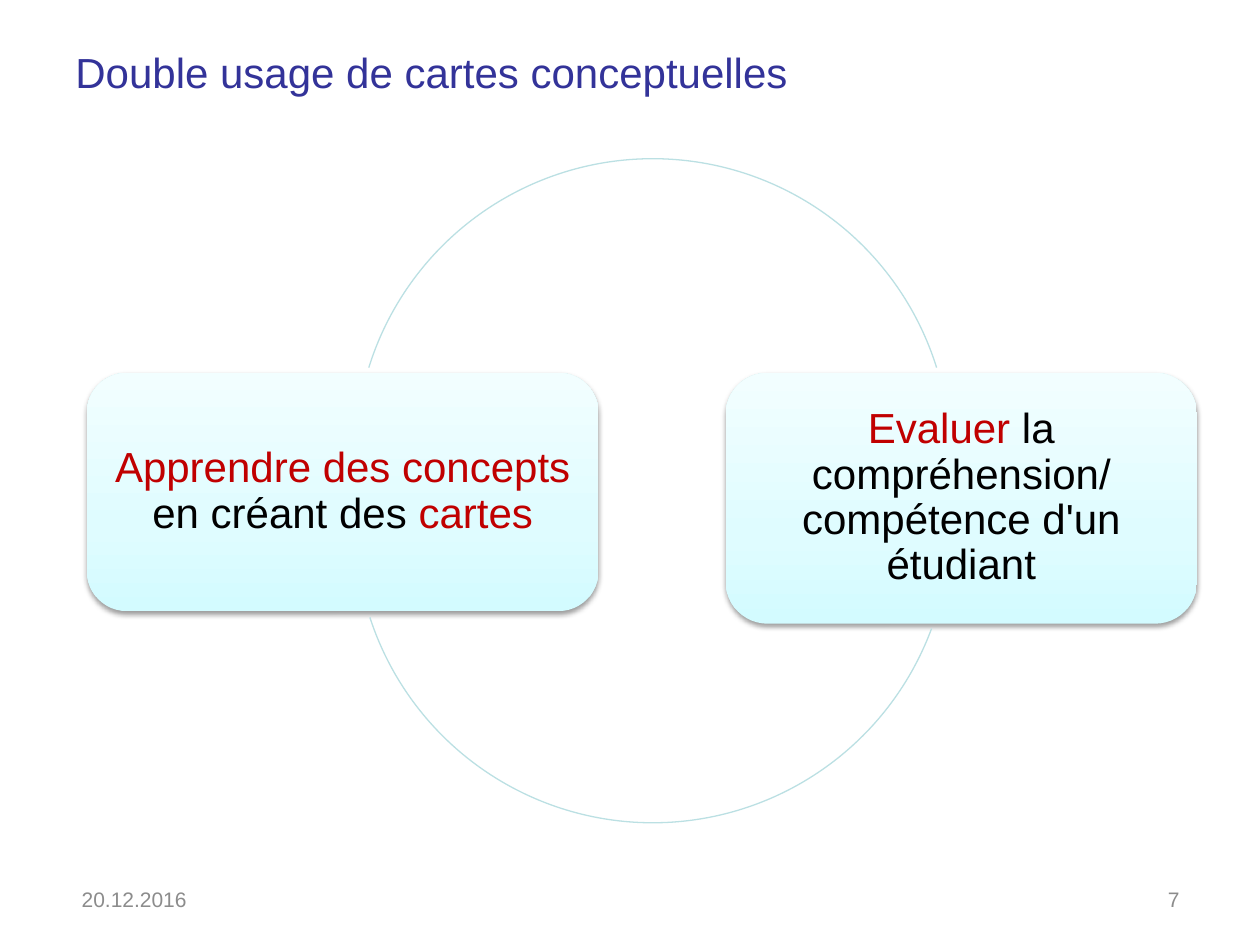
from copy import deepcopy
from dataclasses import dataclass

from lxml import etree
from pptx import Presentation
from pptx.dml.color import RGBColor
from pptx.enum.shapes import MSO_SHAPE
from pptx.enum.text import MSO_ANCHOR, PP_ALIGN
from pptx.oxml.ns import qn
from pptx.util import Inches, Pt

ARC, ROUNDED = MSO_SHAPE.ARC, MSO_SHAPE.ROUNDED_RECTANGLE
LEFT, CENTER, RIGHT = PP_ALIGN.LEFT, PP_ALIGN.CENTER, PP_ALIGN.RIGHT
MIDDLE = MSO_ANCHOR.MIDDLE
WIDTH, HEIGHT = 10, 7.5
ARC_UNITS_PER_DEGREE = 0.6


@dataclass(frozen=True)
class Theme:
    font: str = "Arial"
    title: str = "333399"
    accent: str = "C00000"
    body: str = "000000"
    footer: str = "8C8C8C"
    cycle: str = "BBE0E3"
    card: tuple = ((0, "D3FBFF"), (0.35, "DFFCFF"), (1, "F2FEFF"))
    large: int = 24
    small: int = 12
    hairline: float = 0.75


THEME = Theme()


def rgb(value):
    return RGBColor.from_string(value)


def inches(*lengths):
    return [Inches(length) for length in lengths]


def set_font(font, size, color=None):
    font.name = THEME.font
    font.size = Pt(size)
    if color:
        font.color.rgb = rgb(color)


def add_text(s, box, text, size, color, align=LEFT):
    tf = s.shapes.add_textbox(*inches(*box)).text_frame
    tf.word_wrap = True
    tf.vertical_anchor = MIDDLE
    p = tf.paragraphs[0]
    p.text = text
    p.alignment = align
    set_font(p.font, size, color)


def add_arc(s, box, start, end):
    sp = s.shapes.add_shape(ARC, *inches(*box))
    sp.shadow.inherit = False
    sp.adjustments[0] = start * ARC_UNITS_PER_DEGREE
    sp.adjustments[1] = end * ARC_UNITS_PER_DEGREE
    sp.fill.background()
    sp.line.color.rgb = rgb(THEME.cycle)
    sp.line.width = Pt(THEME.hairline)


def fill_gradient(sp):
    sp.fill.gradient()
    sp.fill.gradient_angle = 90
    stops = sp._element.spPr.find(qn("a:gradFill")).find(qn("a:gsLst"))
    stops.append(deepcopy(stops[0]))
    for stop, (position, color) in zip(sp.fill.gradient_stops, THEME.card):
        stop.position = position
        stop.color.rgb = rgb(color)


def drop_shadow(sp):
    sp.shadow.inherit = False
    effects = sp._element.spPr.find(qn("a:effectLst"))
    shadow = etree.SubElement(
        effects, qn("a:outerShdw"), blurRad=str(Pt(3.1)), dist=str(Pt(1.6)),
        dir="5400000", rotWithShape="0")
    color = etree.SubElement(shadow, qn("a:srgbClr"), val="000000")
    etree.SubElement(color, qn("a:alpha"), val="38000")


def add_card(s, box, runs):
    sp = s.shapes.add_shape(ROUNDED, *inches(*box))
    fill_gradient(sp)
    sp.line.fill.background()
    drop_shadow(sp)
    tf = sp.text_frame
    tf.word_wrap = True
    tf.vertical_anchor = MIDDLE
    tf.margin_left = tf.margin_right = Inches(0.1)
    tf.margin_top = tf.margin_bottom = Inches(0.1)
    p = tf.paragraphs[0]
    p.alignment = CENTER
    p.line_spacing = 0.9
    set_font(p.font, THEME.large)
    for text, color in runs:
        for i, line in enumerate(text.split("\n")):
            if i:
                p.add_line_break()
            r = p.add_run()
            r.text = line
            set_font(r.font, THEME.large, color)


def main():
    prs = Presentation()
    prs.slide_width, prs.slide_height = inches(WIDTH, HEIGHT)
    s = prs.slides.add_slide(prs.slide_layouts[6])

    margin = 0.05 * WIDTH
    add_text(s, (margin, 0.04 * HEIGHT, WIDTH - 2 * margin, 0.54),
             "Double usage de cartes conceptuelles", THEME.large, THEME.title)

    card_top = 2.96
    add_card(s, (0.69, card_top, 4.06, 1.89),
             [("Apprendre des concepts ", THEME.accent),
              ("en créant des ", THEME.body),
              ("cartes", THEME.accent)])
    add_card(s, (5.76, card_top, 3.74, 1.99),
             [("Evaluer", THEME.accent),
              (" la compréhension/\ncompétence d'un étudiant", THEME.body)])

    cycle_left, diameter = 2.82, 4.72
    for top, start, end in ((1.26, 197.3, 342.7), (1.81, 20.3, 162)):
        add_arc(s, (cycle_left, top, diameter, diameter), start, end)

    footer_width = 2.33
    add_text(s, (0.55, 6.95, footer_width, 0.37), "20.12.2016",
             THEME.small, THEME.footer)
    add_text(s, (7.13, 6.98, footer_width, 0.31), "7",
             THEME.small, THEME.footer, RIGHT)

    prs.save("out.pptx")


if __name__ == "__main__":
    main()
